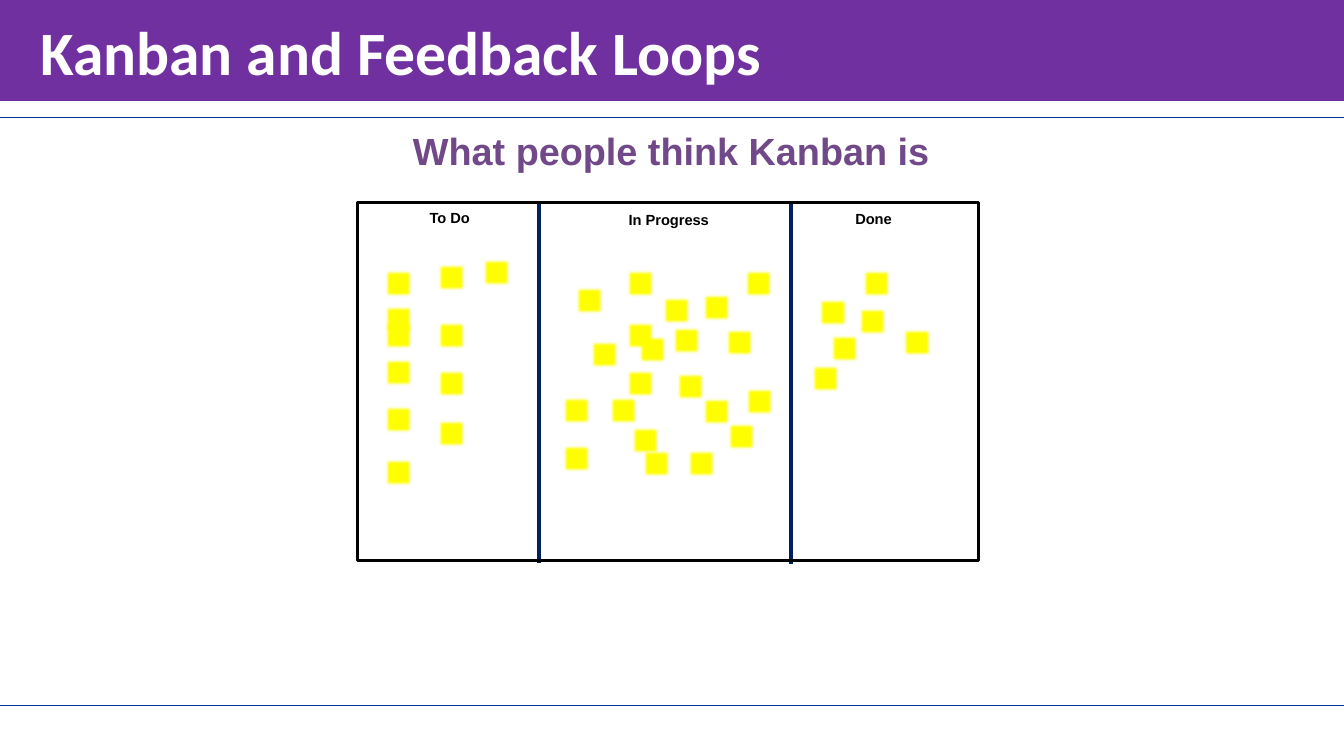
from dataclasses import dataclass

from lxml import etree
from pptx import Presentation
from pptx.dml.color import RGBColor as Rgb
from pptx.enum import shapes, text
from pptx.oxml import ns
from pptx.util import Pt


@dataclass(frozen=True)
class Theme:
    """Colours, fonts and type sizes of the slide."""
    band: str = "7030A0"
    white: str = "FFFFFF"
    lead: str = "714989"
    ink: str = "000000"
    note: str = "FFFF00"
    navy: str = "002060"
    rule: str = "003399"
    head: str = "Calibri"
    body: str = "Arial"
    title: float = 44
    sub: float = 27
    label: float = 10.5


T = Theme()
WIDTH, SIDE = 960, 21
BOARD = (255.5, 144.5, 443.5, 256)
WALLS = [(385, 144.5, 402), (565, 145.5, 403)]
LABELS = [("To Do", 299, 145.5, 44.5), ("In Progress", 441.5, 147, 72.5),
          ("Done", 603.5, 146, 41)]
TODO = {274: [192, 217.5, 229.5, 255.5, 289, 327],
        312: [188, 229.5, 263.5, 299.5],
        344: [184.5]}
DOING = {401: [283, 317], 410.5: [204.5], 421: [242.5], 435: [283],
         447: [192, 229.5, 263.5], 450.5: [304], 455.5: [239],
         458.5: [320.5], 472.5: [211], 480: [232.5], 483: [265.5],
         490.5: [320.5], 501: [209, 283.5], 517.5: [234],
         519: [301.5], 531.5: [192], 532: [276.5]}
DONE = {579: [260], 584.5: [213], 592.5: [238.5], 612.5: [219.5],
        615.5: [192], 644.5: [234.5]}


def style(frame, words, font, size, color):
    """Set bold text in a frame and return its paragraph."""
    frame.text = words
    para = frame.paragraphs[0]
    face = para.runs[0].font
    face.name, face.size, face.bold = font, Pt(size), True
    face.color.rgb = Rgb.from_string(color)
    return para


def inset(frame, left, top, right, low):
    """Set the inner margins of a frame."""
    frame.margin_left, frame.margin_top = Pt(left), Pt(top)
    frame.margin_right, frame.margin_bottom = Pt(right), Pt(low)


def line(tree, start, end, color, width):
    """Draw a straight line without a shadow."""
    link = tree.add_connector(shapes.MSO_CONNECTOR.STRAIGHT,
                              *map(Pt, start + end))
    link.line.color.rgb = Rgb.from_string(color)
    link.line.width = Pt(width)
    etree.SubElement(link._element.spPr, ns.qn("a:effectLst"))


def rect(tree, box, fill, color, width):
    """Draw a rectangle, hollow when no fill is given."""
    shape = tree.add_shape(shapes.MSO_SHAPE.RECTANGLE, *map(Pt, box))
    shape.shadow.inherit = False
    if fill:
        shape.fill.solid()
        shape.fill.fore_color.rgb = Rgb.from_string(fill)
    else:
        shape.fill.background()
    shape.line.color.rgb = Rgb.from_string(color)
    shape.line.width = Pt(width)
    return shape


def note(tree, left, top):
    """Draw a sticky note with soft edges."""
    shape = rect(tree, (left, top, SIDE, SIDE), T.note, T.navy, 0.5)
    glow = shape._element.spPr.find(ns.qn("a:effectLst"))
    etree.SubElement(glow, ns.qn("a:softEdge"), rad=str(Pt(2.5)))


def label(tree, words, left, top, width):
    """Write the heading of a board column."""
    box = tree.add_textbox(*map(Pt, (left, top, width, 20)))
    frame = box.text_frame
    frame.word_wrap = False
    frame.auto_size = text.MSO_AUTO_SIZE.SHAPE_TO_FIT_TEXT
    para = style(frame, words, T.body, T.label, T.ink)
    para.alignment = text.PP_ALIGN.CENTER


def title(slide, words):
    """Turn the title placeholder into the top band."""
    band = slide.shapes.title
    band.left, band.top, band.width, band.height = map(Pt, (0, 0, WIDTH, 72))
    band.fill.solid()
    band.fill.fore_color.rgb = Rgb.from_string(T.band)
    frame = band.text_frame
    frame.auto_size = text.MSO_AUTO_SIZE.NONE
    frame.vertical_anchor = text.MSO_ANCHOR.MIDDLE
    inset(frame, 28.8, 3.6, 7.2, 3.6)
    para = style(frame, words, T.head, T.title, T.white)
    para.alignment = text.PP_ALIGN.LEFT


def lead(slide, words):
    """Write the centred line under the band."""
    box = slide.shapes.add_textbox(*map(Pt, (169, 89.5, 621, 36.5)))
    frame = box.text_frame
    frame.word_wrap = True
    frame.vertical_anchor = text.MSO_ANCHOR.MIDDLE
    inset(frame, 5, 3, 5, 3)
    para = style(frame, words, T.body, T.sub, T.lead)
    para.alignment = text.PP_ALIGN.CENTER


def board(slide):
    """Draw the board with its walls, notes and headings."""
    tree = slide.shapes.add_group_shape().shapes
    for left, top, low in WALLS:
        line(tree, (left, top), (left, low), T.navy, 3)
    for column in (TODO, DOING, DONE):
        for left, tops in column.items():
            for top in tops:
                note(tree, left, top)
    for item in LABELS:
        label(tree, *item)
    rect(tree, BOARD, None, T.ink, 2)


def main():
    """Build the slide and save it."""
    deck = Presentation()
    deck.slide_width, deck.slide_height = Pt(WIDTH), Pt(540)
    slide = deck.slides.add_slide(deck.slide_layouts[5])
    for top in (83.5, 504):
        line(slide.shapes, (0, top), (WIDTH, top), T.rule, 0.5)
    board(slide)
    lead(slide, "What people think Kanban is")
    title(slide, "Kanban and Feedback Loops")
    deck.save("out.pptx")


if __name__ == "__main__":
    main()
